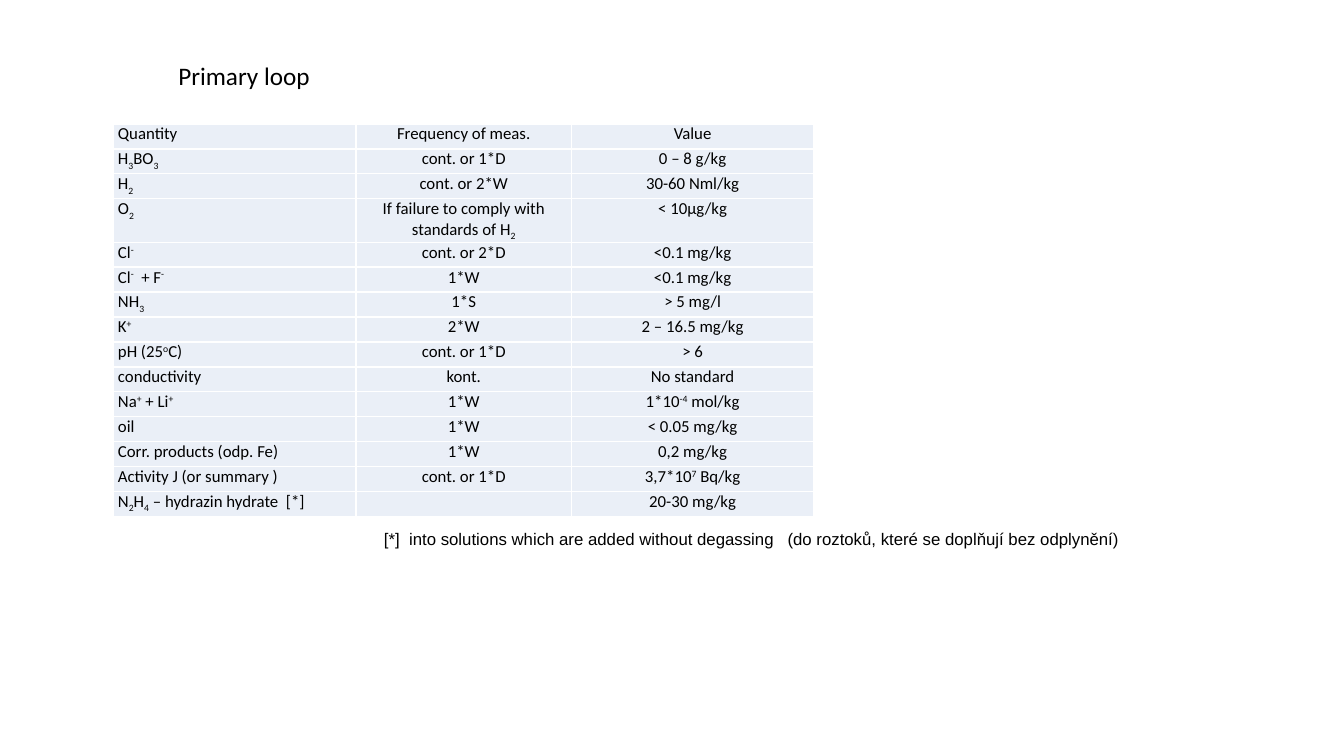
from lxml import etree
from pptx import Presentation
from pptx.dml.color import RGBColor
from pptx.enum.text import MSO_ANCHOR, PP_ALIGN
from pptx.oxml.ns import qn
from pptx.util import Inches, Pt

LEFT, CENTER = PP_ALIGN.LEFT, PP_ALIGN.CENTER
TOP, MIDDLE = MSO_ANCHOR.TOP, MSO_ANCHOR.MIDDLE
BASELINES = {"_": "-25000", "^": "30000"}


def color(hex_string):
    return RGBColor.from_string(hex_string)


def write(frame, text, font="Calibri", size=12, align=LEFT):
    """Write one paragraph; |_x| is a subscript and |^x| a superscript."""
    para = frame.paragraphs[0]
    para.alignment = align
    if not text:
        etree.SubElement(para._p, qn("a:endParaRPr"), sz=str(size * 100))
        return
    for index, part in enumerate(text.split("|")):
        if not part:
            continue
        script = index % 2 == 1
        span = para.add_run()
        span.text = part[1:] if script else part
        span.font.name = font
        span.font.size = Pt(size)
        span.font.color.rgb = color("000000")
        if script:
            span.font._element.set("baseline", BASELINES[part[0]])


deck = Presentation()
deck.slide_width, deck.slide_height = Inches(13.33), Inches(7.5)
page = deck.slides.add_slide(deck.slide_layouts[6])

# Table of measured quantities
rows = [
    ("Quantity", "Frequency of meas.", "Value"),
    ("H|_3|BO|_3|", "cont. or 1*D", "0 – 8 g/kg"),
    ("H|_2|", "cont. or 2*W", "30-60 Nml/kg"),
    ("O|_2|", "If failure to comply with standards of H|_2|", "< 10μg/kg"),
    ("Cl|^-|", "cont. or 2*D", "<0.1 mg/kg"),
    ("Cl|^-|  + F|^-|", "1*W", "<0.1 mg/kg"),
    ("NH|_3|", "1*S", "> 5 mg/l"),
    ("K|^+|", "2*W", "2 – 16.5 mg/kg"),
    ("pH (25|^o|C)", "cont. or 1*D", "> 6"),
    ("conductivity", "kont.", "No standard"),
    ("Na|^+| + Li|^+|", "1*W", "1*10|^-4| mol/kg"),
    ("oil", "1*W", "< 0.05 mg/kg"),
    ("Corr. products (odp. Fe)", "1*W", "0,2 mg/kg"),
    ("Activity J (or summary )", "cont. or 1*D", "3,7*10|^7| Bq/kg"),
    ("N|_2|H|_4| – hydrazin hydrate  [*]", "", "20-30 mg/kg"),
]
column_widths = [2.41, 2.14, 2.4]
table = page.shapes.add_table(
    len(rows), len(column_widths), Inches(1.12), Inches(1.23),
    Inches(sum(column_widths)), Inches(3.72)).table
table.first_row = table.horz_banding = False
for column, width in zip(table.columns, column_widths):
    column.width = Inches(width)

for row_index, row in enumerate(rows):
    for column_index, text in enumerate(row):
        cell = table.cell(row_index, column_index)
        cell.margin_left = cell.margin_right = Inches(0.05)
        cell.margin_top = cell.margin_bottom = 0
        write(cell.text_frame, text, align=CENTER if column_index else LEFT)
        # White one-point borders
        properties = cell._tc.get_or_add_tcPr()
        for side in ("a:lnL", "a:lnR", "a:lnT", "a:lnB"):
            border = etree.SubElement(properties, qn(side), w=str(Pt(1)))
            paint = etree.SubElement(border, qn("a:solidFill"))
            etree.SubElement(paint, qn("a:srgbClr"), val="FFFFFF")
        cell.fill.solid()
        cell.fill.fore_color.rgb = color("EAEFF7")

# Heading and footnote
footnote = ("[*]  into solutions which are added without degassing   "
            "(do roztoků, které se doplňují bez odplynění)")
labels = [
    (1.67, 0.55, 7.92, 0.71, "Primary loop", "Calibri", 18, TOP),
    (3.71, 5.2, 9, 0.3, footnote, "Arial", 12, MIDDLE),
]
for left, top, width, height, text, font, size, anchor in labels:
    box = page.shapes.add_textbox(
        Inches(left), Inches(top), Inches(width), Inches(height))
    box.text_frame.word_wrap = True
    box.text_frame.vertical_anchor = anchor
    write(box.text_frame, text, font=font, size=size)

deck.save("out.pptx")
